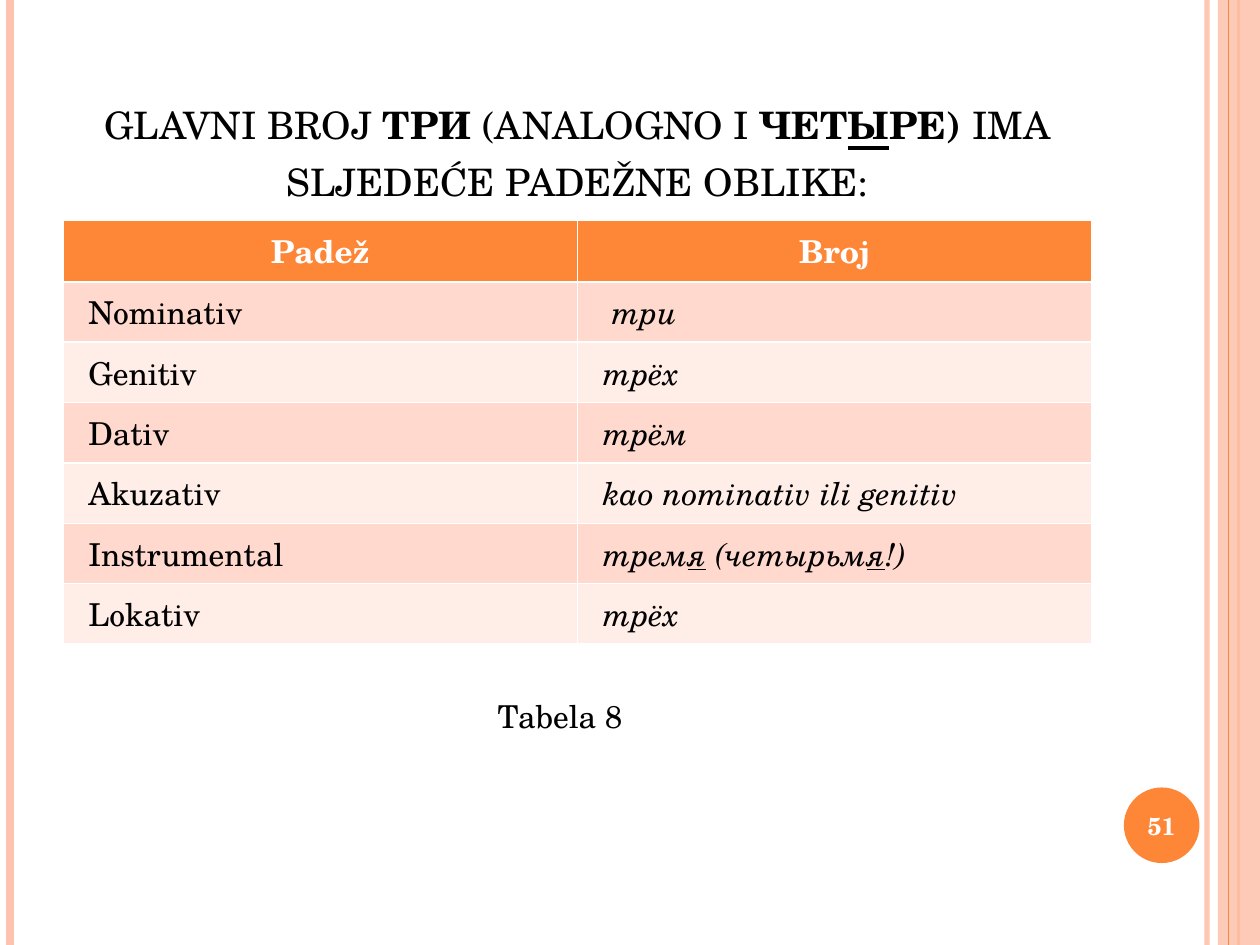
from lxml import etree
from pptx import Presentation
from pptx.dml.color import RGBColor
from pptx.enum.shapes import MSO_CONNECTOR, MSO_SHAPE
from pptx.enum.text import MSO_ANCHOR, MSO_AUTO_SIZE, PP_ALIGN
from pptx.oxml.ns import qn
from pptx.util import Pt

LINE = MSO_CONNECTOR.STRAIGHT
RECT, OVAL = MSO_SHAPE.RECTANGLE, MSO_SHAPE.OVAL
MIDDLE, BOTTOM = MSO_ANCHOR.MIDDLE, MSO_ANCHOR.BOTTOM
LEFT, CENTER = PP_ALIGN.LEFT, PP_ALIGN.CENTER
FIXED = MSO_AUTO_SIZE.NONE

FONT = "TeX Gyre Schola"
ORANGE, PEACH, WHITE, BLACK = "FE8637", "FEC3AE", "FFFFFF", "000000"
BANDS = "FFD9CE", "FFEDE8"
WIDTH, HEIGHT = 720, 540

# x, colour, weight, opacity in percent
RULES = [
    (689.76, PEACH, 3, 93),
    (5.76, PEACH, 4.5, 100),
    (707.76, ORANGE, 1.5, 100),
    (702, ORANGE, 0.75, 100),
]
TITLE = [
    ("glavni broj ", ""),
    ("три", "b"),
    (" (analogno i ", ""),
    ("чет", "b"),
    ("ы", "bu"),
    ("ре) ", "b"),
    ("ima sljеdеće раdеžnе oblike:", ""),
]
HEADS = "Padež", "Broj"
CASES = [
    ("Nominativ", [(" три", "i")]),
    ("Genitiv", [("трёх", "i")]),
    ("Dativ", [("трём", "i")]),
    ("Akuzativ", [("kao nominativ ili genitiv", "i")]),
    ("Instrumental", [("трем", "i"), ("я", "iu"), (" (четырьм", "i"),
                      ("я", "iu"), ("!)", "i")]),
    ("Lokativ", [("трёх", "i")]),
]


def color(code):
    return RGBColor.from_string(code)


def fade(shape, percent):
    """Set the opacity of every plain colour in the shape."""
    for node in shape._element.iter(qn("a:srgbClr")):
        etree.SubElement(node, qn("a:alpha")).set("val", str(percent * 1000))


def write(frame, text, size=18, tint=BLACK, align=LEFT, style="", caps=False):
    """Fill a frame with a string or with (text, style) runs; styles use b, i, u."""
    para = frame.paragraphs[0]
    para.alignment = align
    for part, marks in [(text, style)] if isinstance(text, str) else text:
        run = para.add_run()
        run.text = part
        font = run.font
        font.name, font.size = FONT, Pt(size)
        font.color.rgb = color(tint)
        font.bold, font.italic = "b" in marks, "i" in marks
        font.underline = "u" in marks
        if caps:
            run._r.get_or_add_rPr().set("cap", "small")


def add_rule(slide, x, tint, weight, alpha):
    rule = slide.shapes.add_connector(LINE, Pt(x), 0, Pt(x), Pt(HEIGHT))
    rule.line.color.rgb = color(tint)
    rule.line.width = Pt(weight)
    etree.SubElement(rule._element.spPr, qn("a:effectLst"))
    if alpha < 100:
        fade(rule, alpha)


def add_block(slide, kind, box, tint):
    shape = slide.shapes.add_shape(kind, *map(Pt, box))
    shape.shadow.inherit = False
    shape.fill.solid()
    shape.fill.fore_color.rgb = color(tint)
    shape.line.fill.background()
    return shape


def add_frame(slide):
    """Draw the side bands and the page number."""
    for rule in RULES[:3]:
        add_rule(slide, *rule)
    fade(add_block(slide, RECT, (696, 0, 24, HEIGHT), PEACH), 87)
    add_rule(slide, *RULES[3])
    badge = add_block(slide, OVAL, (642.24, 450, 43.2, 43.2), ORANGE).text_frame
    badge.margin_left = badge.margin_right = 0
    badge.vertical_anchor = MIDDLE
    write(badge, "51", size=14, tint=WHITE, align=CENTER, style="b")


def set_title(slide):
    title = slide.shapes.title
    title.left, title.top, title.width, title.height = map(
        Pt, (36, 54.72, 588, 130.32))
    frame = title.text_frame
    frame.auto_size = FIXED
    frame.word_wrap = True
    frame.vertical_anchor = BOTTOM
    frame.margin_top, frame.margin_bottom = 0, Pt(67.5)
    frame.paragraphs[0].line_spacing = Pt(32.5)
    write(frame, TITLE, size=27, align=CENTER, caps=True)


def set_cell(cell, text, fill, **form):
    cell.fill.solid()
    cell.fill.fore_color.rgb = color(fill)
    cell.vertical_anchor = MIDDLE
    write(cell.text_frame, text, **form)


def add_cases(slide):
    count = len(CASES) + 1
    table = slide.shapes.add_table(
        count, 2, Pt(36), Pt(126), Pt(588), Pt(34.5 * count)).table
    for col, head in enumerate(HEADS):
        set_cell(table.cell(0, col), head, ORANGE,
                 tint=WHITE, align=CENTER, style="b")
    for row, case in enumerate(CASES, 1):
        for col, text in enumerate(case):
            cell = table.cell(row, col)
            cell.margin_left = Pt(14.5)
            set_cell(cell, text, BANDS[(row - 1) % 2])


def add_label(slide, text, box):
    frame = slide.shapes.add_textbox(*map(Pt, box)).text_frame
    frame.word_wrap = True
    write(frame, text, align=CENTER)


def main():
    deck = Presentation()
    deck.slide_width, deck.slide_height = Pt(WIDTH), Pt(HEIGHT)
    slide = deck.slides.add_slide(deck.slide_layouts[5])
    add_frame(slide)
    set_title(slide)
    add_cases(slide)
    add_label(slide, "Tabela 8", (212.4, 394.56, 215.28, 28.8))
    deck.save("out.pptx")


if __name__ == "__main__":
    main()
